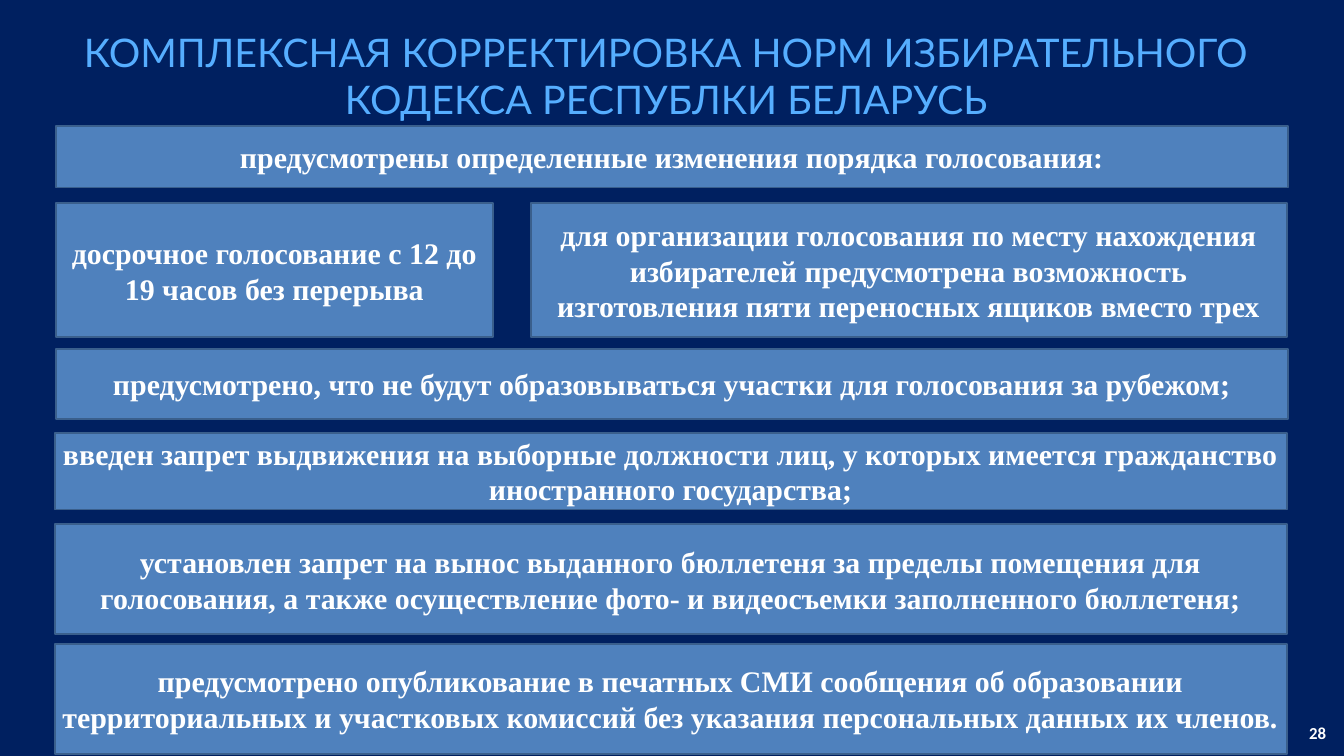
from pptx import Presentation
from pptx import util as u
from pptx.dml.color import RGBColor
from pptx.enum import shapes, text

PX = 9525


def color(value):
    return RGBColor.from_string(value)


def write(shape, content, align, style, font_color):
    frame = shape.text_frame
    frame.word_wrap = True
    frame.vertical_anchor = text.MSO_ANCHOR.MIDDLE
    paragraph = frame.paragraphs[0]
    paragraph.alignment = align
    run = paragraph.add_run()
    run.text = content
    for name, value in style.items():
        setattr(run.font, name, value)
    run.font.color.rgb = color(font_color)
    return frame


presentation = Presentation()
presentation.slide_width = 1920 * PX
presentation.slide_height = 1080 * PX
slide = presentation.slides.add_slide(presentation.slide_layouts[6])
slide.background.fill.solid()
slide.background.fill.fore_color.rgb = color("002060")

number_style = {"name": "Calibri", "size": u.Pt(18), "bold": True}
title_style = {"name": "Lato", "size": u.Pt(42.2), "bold": False}
box_style = {"name": "Times New Roman", "size": u.Pt(32), "bold": True}

number = slide.shapes.add_textbox(1680 * PX, 1028 * PX, 224 * PX, 38 * PX)
write(number, "28", text.PP_ALIGN.RIGHT, number_style, "FFFFFF")

title = slide.shapes.add_textbox(0, 40 * PX, 1904 * PX, 136 * PX)
frame = write(
    title,
    "КОМПЛЕКСНАЯ КОРРЕКТИРОВКА НОРМ ИЗБИРАТЕЛЬНОГО КОДЕКСА РЕСПУБЛКИ БЕЛАРУСЬ",
    text.PP_ALIGN.CENTER, title_style, "56AEFF",
)
frame.vertical_anchor = text.MSO_ANCHOR.TOP
frame.auto_size = text.MSO_AUTO_SIZE.SHAPE_TO_FIT_TEXT
frame.paragraphs[0].line_spacing = u.Pt(50.6)
for side in ("left", "top", "right", "bottom"):
    setattr(frame, f"margin_{side}", 0)

boxes = [
    (80, 180, 1760, 88, "предусмотрены определенные изменения порядка голосования:"),
    (80, 290, 624, 192, "досрочное голосование с 12 до 19 часов без перерыва"),
    (758, 290, 1080, 192,
     "для организации голосования по месту нахождения избирателей предусмотрена "
     "возможность изготовления пяти переносных ящиков вместо трех"),
    (80, 499, 1760, 99,
     "предусмотрено, что не будут образовываться участки для голосования за рубежом;"),
    (78, 618, 1760, 110,
     "введен запрет выдвижения на выборные должности лиц, у которых имеется "
     "гражданство иностранного государства;"),
    (78, 749, 1760, 157,
     "установлен запрет на вынос выданного бюллетеня за пределы помещения для "
     "голосования, а также осуществление фото- и видеосъемки заполненного бюллетеня;"),
    (78, 920, 1760, 157,
     "предусмотрено опубликование в печатных СМИ сообщения об образовании "
     "территориальных и участковых комиссий без указания персональных данных их членов."),
]
for left, top, width, height, content in boxes:
    box = slide.shapes.add_shape(
        shapes.MSO_SHAPE.RECTANGLE, left * PX, top * PX, width * PX, height * PX
    )
    box.shadow.inherit = False
    box.fill.solid()
    box.fill.fore_color.rgb = color("4F81BD")
    box.line.color.rgb = color("3A5F8C")
    box.line.width = u.Pt(2)
    write(box, content, text.PP_ALIGN.CENTER, box_style, "FFFFFF")

presentation.save("out.pptx")
